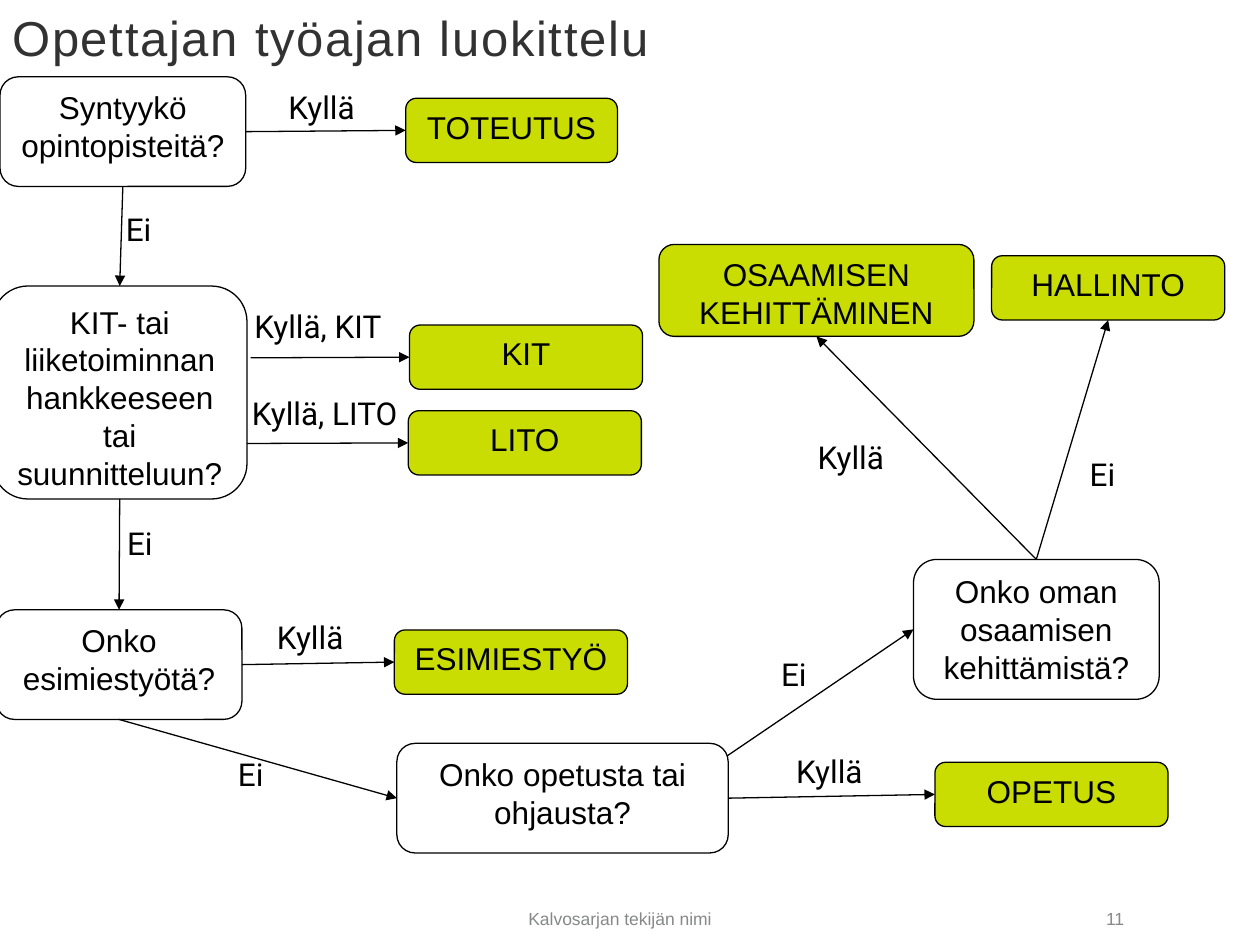
"""Build the decision flowchart that classifies a teacher's working time."""
from dataclasses import dataclass
from typing import Optional

from lxml.etree import SubElement
from pptx import Presentation
from pptx.dml.color import RGBColor
from pptx.enum.shapes import MSO_CONNECTOR as Connector, MSO_SHAPE as Preset
from pptx.enum.text import MSO_ANCHOR as Anchor, MSO_AUTO_SIZE as AutoSize, PP_ALIGN as Align
from pptx.oxml.ns import qn
from pptx.util import Inches, Pt

BLACK = RGBColor(0x00, 0x00, 0x00)
WHITE = RGBColor(0xFF, 0xFF, 0xFF)
LIME = RGBColor(0xC9, 0xDD, 0x03)
CHARCOAL = RGBColor(0x32, 0x32, 0x32)
GREY = RGBColor(0x87, 0x89, 0x89)

NODE_FONT = {"name": "Arial", "size": Pt(18)}
LABEL_FONT = {"name": "Roboto", "size": Pt(18)}
TITLE_FONT = {"name": "Arial", "size": Pt(28)}
FOOTER_FONT = {"name": "Arial", "size": Pt(10)}
LABEL_FRAME = {"word_wrap": False, "auto_size": AutoSize.SHAPE_TO_FIT_TEXT}
TOP, LEFT, BOTTOM, RIGHT = range(4)
LABEL_HEIGHT = 0.4


@dataclass(frozen=True)
class Node:
    text: str
    left: float
    top: float
    width: float = 1.85
    height: float = 0.51
    fill: RGBColor = LIME


@dataclass(frozen=True)
class Arrow:
    target: str
    target_side: int
    source: Optional[str] = None
    source_side: int = RIGHT
    start: tuple[float, float] = (0, 0)


@dataclass(frozen=True)
class Label:
    text: str
    left: float
    top: float


NODES = {
    "credits": Node("Syntyykö opintopisteitä?", 0, 0.61, 1.95, 0.87, WHITE),
    "project": Node("KIT- tai liiketoiminnan hankkeeseen tai suunnitteluun?",
                    -0.06, 2.27, 2.02, 1.69, WHITE),
    "manager": Node("Onko esimiestyötä?", -0.03, 4.84, 1.95, 0.87, WHITE),
    "guidance": Node("Onko opetusta tai ohjausta?", 3.15, 5.9, 2.63, 0.87, WHITE),
    "learning": Node("Onko oman osaamisen kehittämistä?", 7.25, 4.44, 1.95, 1.11, WHITE),
    "toteutus": Node("TOTEUTUS", 3.22, 0.78, 1.68),
    "kit": Node("KIT", 3.25, 2.58),
    "lito": Node("LITO", 3.24, 3.26),
    "esimiestyö": Node("ESIMIESTYÖ", 3.13, 5),
    "opetus": Node("OPETUS", 7.42, 6.05),
    "osaaminen": Node("OSAAMISEN KEHITTÄMINEN", 5.23, 1.94, 2.5, 0.73),
    "hallinto": Node("HALLINTO", 7.87, 2.03),
}

ARROWS = [
    Arrow("toteutus", LEFT, "credits"),
    Arrow("project", TOP, "credits", BOTTOM),
    Arrow("kit", LEFT, start=(1.99, 2.84)),
    Arrow("lito", LEFT, start=(1.96, 3.52)),
    Arrow("manager", TOP, "project", BOTTOM),
    Arrow("esimiestyö", LEFT, "manager"),
    Arrow("guidance", LEFT, "manager", BOTTOM),
    Arrow("opetus", LEFT, "guidance"),
    Arrow("learning", LEFT, start=(5.77, 6)),
    Arrow("osaaminen", BOTTOM, "learning", TOP),
    Arrow("hallinto", BOTTOM, "learning", TOP),
]

LABEL_WIDTHS = {"Kyllä": 0.74, "Ei": 0.41, "Kyllä, KIT": 1.33, "Kyllä, LITO": 1.41}
LABELS = [
    Label("Kyllä", 2.19, 0.65),
    Label("Ei", 0.9, 1.62),
    Label("Kyllä, KIT", 1.92, 2.39),
    Label("Kyllä, LITO", 1.9, 3.08),
    Label("Ei", 0.91, 4.11),
    Label("Kyllä", 2.1, 4.86),
    Label("Ei", 1.79, 5.94),
    Label("Kyllä", 6.22, 5.92),
    Label("Ei", 6.1, 5.15),
    Label("Kyllä", 6.39, 3.43),
    Label("Ei", 8.55, 3.56),
]


def set_all(item, values: dict) -> None:
    """Set each named attribute on the item."""
    for name, value in values.items():
        setattr(item, name, value)


def write(box, text: str, font: dict, color=BLACK, align=Align.LEFT, frame=None):
    """Write one formatted paragraph into the box and return its span."""
    set_all(box.text_frame, {"word_wrap": True, "vertical_anchor": Anchor.TOP, **(frame or {})})
    para = box.text_frame.paragraphs[0]
    para.alignment = align
    span = para.add_run()
    span.text = text
    set_all(span.font, font)
    span.font.color.rgb = color
    return span


def add_text(page, text: str, left: float, top: float, width: float, height: float, **style):
    """Add a text box and return its span."""
    box = page.shapes.add_textbox(Inches(left), Inches(top), Inches(width), Inches(height))
    return write(box, text, **style)


def set_line(line) -> None:
    """Apply the thin black line used throughout the chart."""
    line.color.rgb = BLACK
    line.width = Pt(0.75)


def add_node(page, node: Node):
    """Draw a rounded box with its text."""
    box = page.shapes.add_shape(Preset.ROUNDED_RECTANGLE, Inches(node.left), Inches(node.top),
                                Inches(node.width), Inches(node.height))
    box.shadow.inherit = False
    box.fill.solid()
    box.fill.fore_color.rgb = node.fill
    set_line(box.line)
    write(box, node.text, NODE_FONT, align=Align.CENTER)
    return box


def add_arrow(page, arrow: Arrow, boxes: dict) -> None:
    """Draw an arrow joined to its target and, if named, its source."""
    x, y = map(Inches, arrow.start)
    connector = page.shapes.add_connector(Connector.STRAIGHT, x, y, x, y)
    if arrow.source:
        connector.begin_connect(boxes[arrow.source], arrow.source_side)
    connector.end_connect(boxes[arrow.target], arrow.target_side)
    set_line(connector.line)
    properties = connector._element.spPr
    SubElement(properties.find(qn("a:ln")), qn("a:tailEnd"), type="triangle")
    SubElement(properties, qn("a:effectLst"))


def main() -> None:
    """Build and save the deck."""
    deck = Presentation()
    deck.slide_width, deck.slide_height = Inches(10), Inches(7.5)
    page = deck.slides.add_slide(deck.slide_layouts[6])
    title = add_text(page, "Opettajan työajan luokittelu", 0, 0, 10, 0.58, font=TITLE_FONT,
                     color=CHARCOAL, frame={"vertical_anchor": Anchor.MIDDLE})
    title.font._element.set("spc", "100")
    boxes = {name: add_node(page, node) for name, node in NODES.items()}
    for arrow in ARROWS:
        add_arrow(page, arrow, boxes)
    for label in LABELS:
        add_text(page, label.text, label.left, label.top, LABEL_WIDTHS[label.text],
                 LABEL_HEIGHT, font=LABEL_FONT, frame=LABEL_FRAME)
    add_text(page, "Kalvosarjan tekijän nimi", 2.5, 7.16, 4.84, 0.34,
             font=FOOTER_FONT, color=GREY, align=Align.CENTER)
    add_text(page, "11", 7.42, 7.16, 1.6, 0.34,
             font=FOOTER_FONT, color=GREY, align=Align.RIGHT)
    deck.save("out.pptx")


if __name__ == "__main__":
    main()
